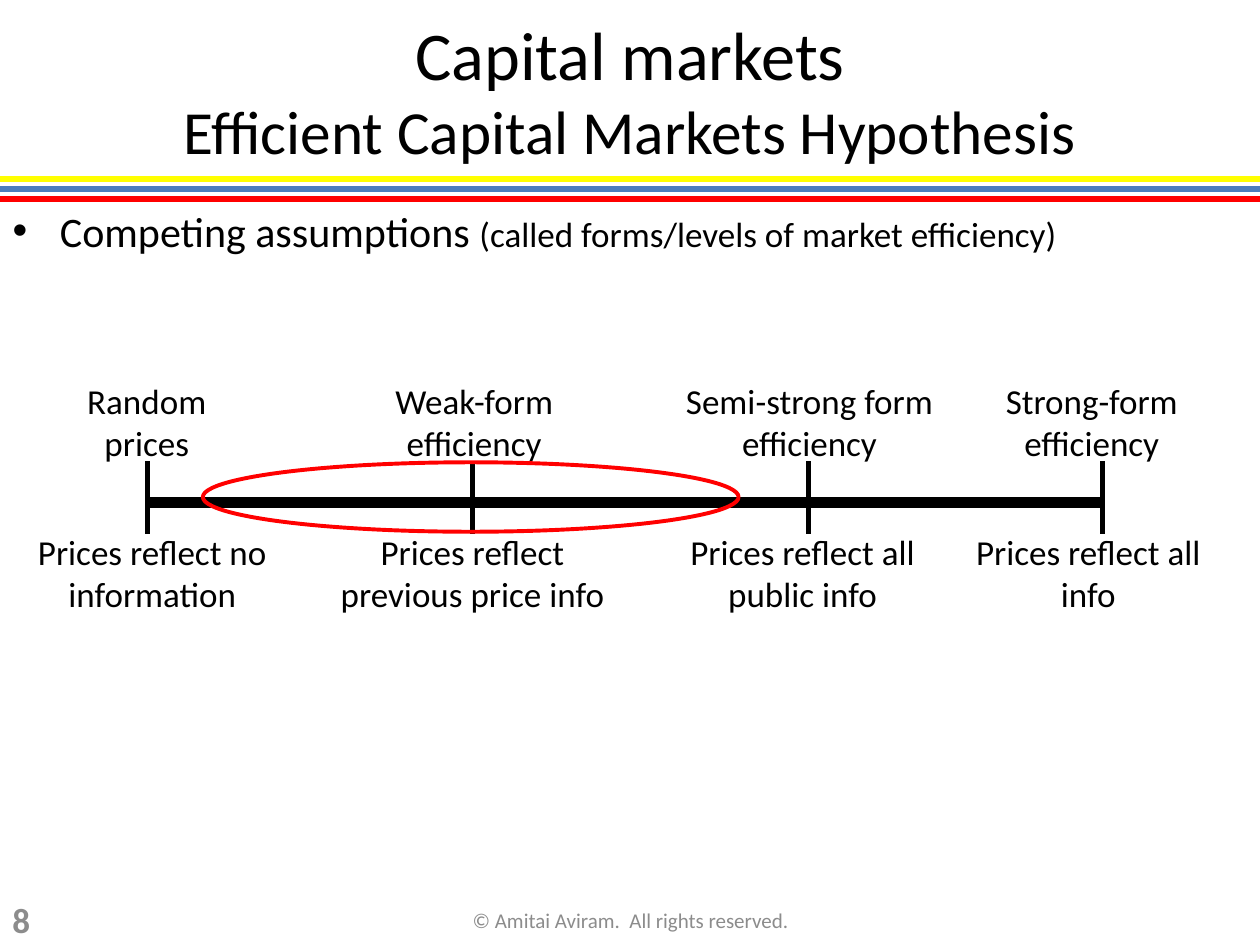
from lxml import etree
from pptx import Presentation
from pptx.dml.color import RGBColor
from pptx.enum.shapes import MSO_CONNECTOR, MSO_SHAPE
from pptx.enum.text import MSO_ANCHOR, MSO_AUTO_SIZE, PP_ALIGN
from pptx.oxml.ns import qn
from pptx.util import Cm, Pt

LINE = MSO_CONNECTOR.STRAIGHT
OVAL = MSO_SHAPE.OVAL
TOP, MIDDLE = MSO_ANCHOR.TOP, MSO_ANCHOR.MIDDLE
FIXED = MSO_AUTO_SIZE.NONE
CENTER, JUSTIFY = PP_ALIGN.CENTER, PP_ALIGN.JUSTIFY
BLACK = RGBColor(0x00, 0x00, 0x00)
GREY = RGBColor(0x8C, 0x8C, 0x8C)
RED = RGBColor(0xFF, 0x00, 0x00)
YELLOW = RGBColor(0xFF, 0xFF, 0x00)
BLUE = RGBColor(0x4B, 0x7E, 0xBC)

deck = Presentation()
deck.slide_width, deck.slide_height = Cm(25.4), Cm(19.05)
slide = deck.slides.add_slide(deck.slide_layouts[1])
shapes = slide.shapes


def add_line(x1, y1, x2, y2, color, width):
    line = shapes.add_connector(LINE, Cm(x1), Cm(y1), Cm(x2), Cm(y2))
    line.line.color.rgb = color
    line.line.width = Pt(width)
    etree.SubElement(line._element.spPr, qn("a:effectLst"))


def add_run(para, text, size, color=BLACK, bold=False):
    run = para.add_run()
    run.text = text
    run.font.name = "Calibri"
    run.font.size = Pt(size)
    run.font.bold = bold
    run.font.color.rgb = color


for y, color in ((3.81, BLUE), (4.01, RED), (3.61, YELLOW)):
    add_line(0, y, 25.4, y, color, 3)

title, body = slide.placeholders
for holder, top, height in ((title, 0, 3.61), (body, 4.01, 14.4)):
    holder.left, holder.top = Cm(0), Cm(top)
    holder.width, holder.height = Cm(25.4), Cm(height)
    holder.text_frame.auto_size = FIXED

title.text_frame.vertical_anchor = MIDDLE
para = title.text_frame.paragraphs[0]
para.alignment = CENTER
add_run(para, "Capital markets", 39)
para.add_line_break()
add_run(para, "Efficient Capital Markets Hypothesis", 35)

para = body.text_frame.paragraphs[0]
add_run(para, "Competing assumptions ", 24)
add_run(para, "(called forms/levels of market efficiency)", 20)

ticks = (2.97, 9.53, 16.3, 22.23)
add_line(ticks[0], 10.13, ticks[-1], 10.13, BLACK, 6)
for x in ticks:
    add_line(x, 9.3, x, 10.77, BLACK, 3)

forms = (
    ("Random prices", 1.27, 3.38),
    ("Weak-form efficiency", 7.26, 4.6),
    ("Semi-strong form efficiency", 13.54, 5.56),
    ("Strong-form efficiency", 19.71, 4.6),
)
claims = (
    ("Prices reflect no information", 0.43, 5.28),
    ("Prices reflect previous price info", 6.35, 6.35),
    ("Prices reflect all public info", 13.54, 5.28),
    ("Prices reflect all info", 19.3, 5.28),
)
labels = []
for group, top in ((forms, 7.52), (claims, 10.57)):
    for text, left, width in group:
        labels.append((text, left, top, width, 1.96, TOP, CENTER, 20, BLACK, False))
labels += [
    ("8", 0, 18.03, 1.7, 1.02, MIDDLE, JUSTIFY, 20, GREY, True),
    ("© Amitai Aviram.  All rights reserved.", 8.69, 18.03, 8.05, 1.02,
     MIDDLE, CENTER, 12, GREY, False),
]
for text, left, top, width, height, anchor, align, size, color, bold in labels:
    frame = shapes.add_textbox(Cm(left), Cm(top), Cm(width), Cm(height)).text_frame
    frame.word_wrap = True
    frame.vertical_anchor = anchor
    para = frame.paragraphs[0]
    para.alignment = align
    add_run(para, text, size, color, bold)

ring = shapes.add_shape(OVAL, Cm(4.09), Cm(9.32), Cm(10.8), Cm(1.4))
ring.shadow.inherit = False
ring.fill.background()
ring.line.color.rgb = RED
ring.line.width = Pt(2.25)

deck.save("out.pptx")
